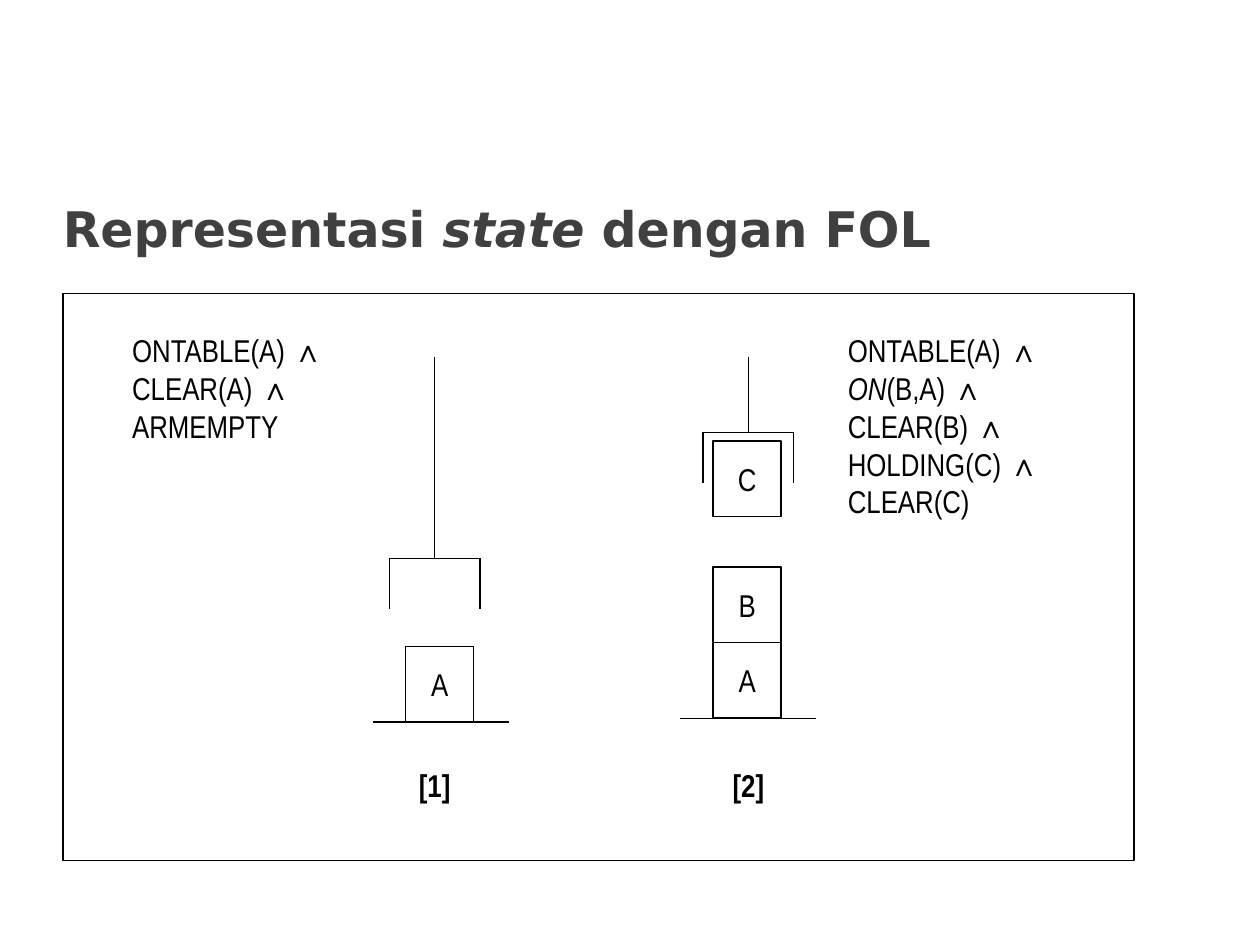
from dataclasses import dataclass

from lxml import etree
from pptx import Presentation
from pptx.dml.color import RGBColor
from pptx.enum import shapes, text
from pptx.oxml import ns
from pptx.util import Inches, Pt


@dataclass(frozen=True)
class Theme:
    ink: RGBColor = RGBColor(0, 0, 0)
    paper: RGBColor = RGBColor(255, 255, 255)
    heading: RGBColor = RGBColor(0x40, 0x40, 0x40)
    heading_font: str = "DejaVu Sans"
    body_font: str = "Arial Narrow"
    heading_size: int = 28
    body_size: int = 18
    stroke: float = 0.75


THEME = Theme()
BLOCK_WIDTH, BLOCK_HEIGHT = 0.54, 0.6
TABLE_WIDTH, TABLE_MARGIN = 1.08, 0.26
HAND_WIDTH, HAND_DEPTH = 0.72, 0.4
LABEL_WIDTH = 0.9


def add_line(page, start, end):
    points = [Inches(value) for value in (*start, *end)]
    line = page.shapes.add_connector(shapes.MSO_CONNECTOR.STRAIGHT, *points)
    line.line.color.rgb = THEME.ink
    line.line.width = Pt(THEME.stroke)
    etree.SubElement(line._element.spPr, ns.qn("a:effectLst"))


def add_rectangle(page, box):
    rectangle = page.shapes.add_shape(
        shapes.MSO_SHAPE.RECTANGLE, *[Inches(value) for value in box])
    rectangle.shadow.inherit = False
    rectangle.fill.solid()
    rectangle.fill.fore_color.rgb = THEME.paper
    rectangle.line.color.rgb = THEME.ink
    rectangle.line.width = Pt(THEME.stroke)
    return rectangle


def style_body(para, bold=False):
    para.font.name = THEME.body_font
    para.font.size = Pt(THEME.body_size)
    para.font.color.rgb = THEME.ink
    para.font.bold = bold


def add_text(page, box):
    frame = page.shapes.add_textbox(*[Inches(value) for value in box]).text_frame
    frame.word_wrap = True
    return frame


def add_spans(para, spans):
    for words, italic in spans:
        span = para.add_run()
        span.text = words
        if italic:
            span.font.italic = True


def add_title(page, box, spans):
    frame = add_text(page, box)
    frame.vertical_anchor = text.MSO_ANCHOR.MIDDLE
    para = frame.paragraphs[0]
    add_spans(para, spans)
    para.font.name = THEME.heading_font
    para.font.size = Pt(THEME.heading_size)
    para.font.color.rgb = THEME.heading
    para.font.bold = True


def add_block(page, left, top, name):
    block = add_rectangle(page, (left, top, BLOCK_WIDTH, BLOCK_HEIGHT))
    frame = block.text_frame
    frame.vertical_anchor = text.MSO_ANCHOR.MIDDLE
    para = frame.paragraphs[0]
    para.text = name
    para.alignment = text.PP_ALIGN.CENTER
    style_body(para)


def add_tower(page, left, table, names):
    for level, name in enumerate(names, 1):
        add_block(page, left + TABLE_MARGIN, table - level * BLOCK_HEIGHT, name)
    add_line(page, (left, table), (left + TABLE_WIDTH, table))


def add_arm(page, center, top, length):
    hand = top + length
    left, right = center - HAND_WIDTH / 2, center + HAND_WIDTH / 2
    add_line(page, (center, top), (center, hand))
    add_line(page, (left, hand), (right, hand))
    for finger in (left, right):
        add_line(page, (finger, hand), (finger, hand + HAND_DEPTH))


def add_formula(page, box, lines):
    frame = add_text(page, box)
    for index, spans in enumerate(lines):
        para = frame.add_paragraph() if index else frame.paragraphs[0]
        add_spans(para, spans)
        style_body(para)


def add_label(page, box, words):
    para = add_text(page, box).paragraphs[0]
    para.text = words
    para.alignment = text.PP_ALIGN.CENTER
    style_body(para, bold=True)


def add_state(page, box, label, center, arm_length, tower, held=None):
    left, top, width, height = box
    add_arm(page, center, top + 0.5, arm_length)
    tower_left, table, names = tower
    add_tower(page, tower_left, table, names)
    if held:
        add_block(page, tower_left + TABLE_MARGIN, top + 0.5 + arm_length + 0.07, held)
    add_label(page, (center - LABEL_WIDTH / 2, top + height - 0.8, LABEL_WIDTH, 0.8), label)


def add_diagram(page, box):
    left, top, width, height = box
    add_rectangle(page, box)
    half = width / 2
    add_state(page, (left, top, half, height), "[1]", left + 2.95, 1.6,
              (left + 2.46, top + 3.4, "A"))
    add_state(page, (left + half, top, half, height), "[2]", left + 5.44, 0.6,
              (left + 4.9, top + 3.37, "AB"), held="C")
    add_formula(page, (left + 0.45, top + 0.25, 2.15, 1.6), [
        [("ONTABLE(A) ∧", False)],
        [("CLEAR(A) ∧", False)],
        [("ARMEMPTY", False)],
    ])
    add_formula(page, (left + 6.13, top + 0.25, 2.15, 2.07), [
        [("ONTABLE(A) ∧", False)],
        [("ON", True), ("(B,A) ∧", False)],
        [("CLEAR(B) ∧", False)],
        [("HOLDING(C) ∧", False)],
        [("CLEAR(C)", False)],
    ])


def main():
    deck = Presentation()
    deck.slide_width, deck.slide_height = Inches(10), Inches(7.5)
    page = deck.slides.add_slide(deck.slide_layouts[6])
    add_title(page, (0.4, 1.46, 9.11, 0.7),
              [("Representasi ", False), ("state ", True), ("dengan FOL", False)])
    add_diagram(page, (0.5, 2.33, 8.5, 4.5))
    deck.save("out.pptx")


if __name__ == "__main__":
    main()
